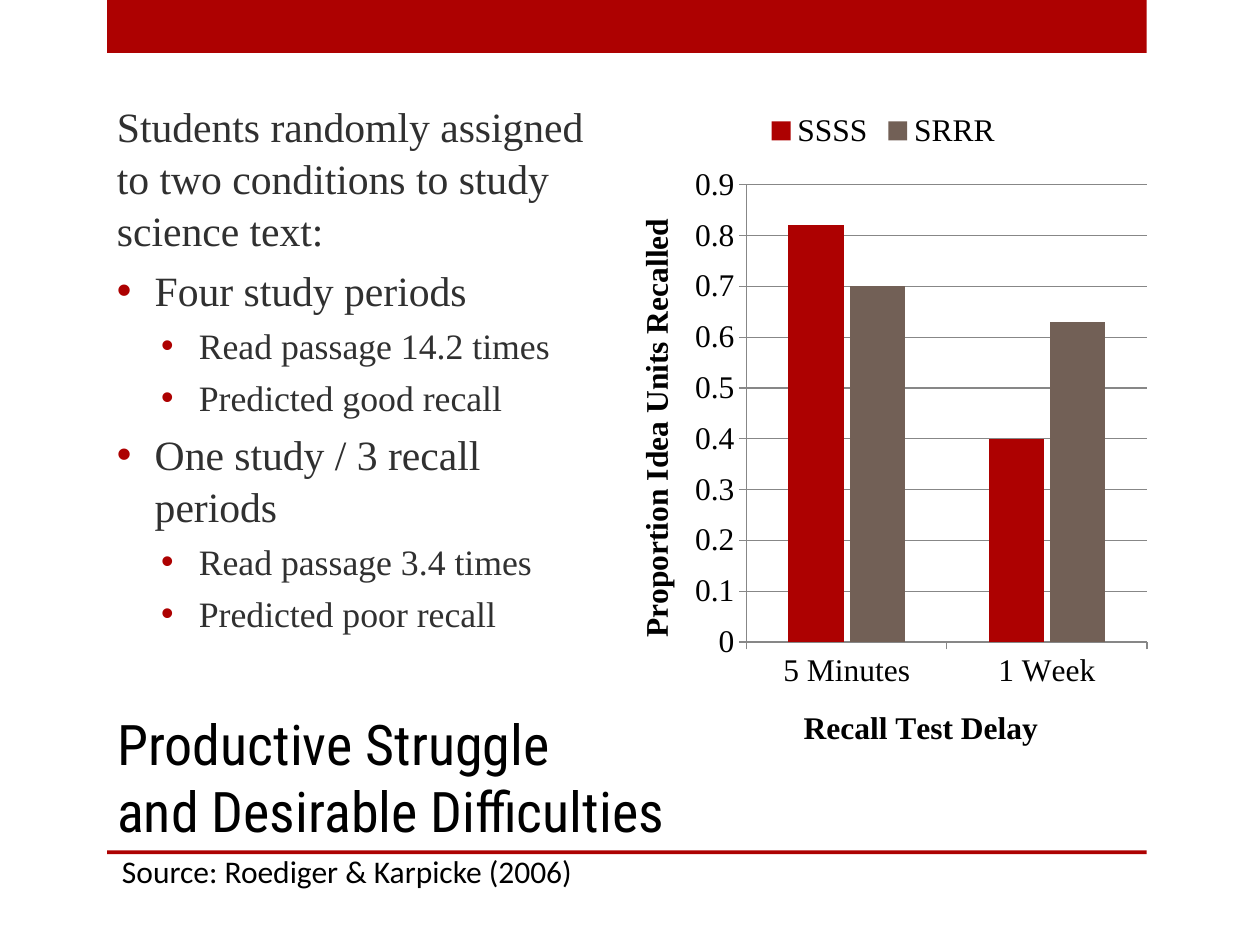
from lxml import etree
from pptx import Presentation
from pptx.chart.data import CategoryChartData
from pptx.dml.color import RGBColor
from pptx.enum.chart import XL_CHART_TYPE as ChartType, XL_LEGEND_POSITION as LegendPosition
from pptx.enum.chart import XL_TICK_MARK as TickMark
from pptx.enum.shapes import MSO_SHAPE as Shape
from pptx.enum.text import MSO_ANCHOR as Anchor, PP_ALIGN as Align
from pptx.oxml.ns import qn
from pptx.util import Inches, Pt

RED, BROWN, BLACK, DARK, GRAY = "AD0101", "726056", "000000", "303030", "878787"
SERIF = "Times New Roman"

# (level, text): level 0 is the plain lead-in, 1 and 2 are bulleted
STUDY_DESIGN = [
    (0, "Students randomly assigned to two conditions to study science text:"),
    (1, "Four study periods"),
    (2, "Read passage 14.2 times"),
    (2, "Predicted good recall"),
    (1, "One study / 3 recall periods"),
    (2, "Read passage 3.4 times"),
    (2, "Predicted poor recall"),
]
LEVEL_SIZE = {0: 23.8, 1: 23.8, 2: 20.4}
LEVEL_INDENT = {1: 0.3, 2: 0.65}
RECALL = [("SSSS", (0.82, 0.4), RED), ("SRRR", (0.7, 0.63), BROWN)]


def color(hex_string):
    return RGBColor.from_string(hex_string)


def inches(box):
    return [Inches(length) for length in box]


def style_font(font, name, size, hex_string, bold=False):
    font.name, font.size, font.bold = name, Pt(size), bold
    font.color.rgb = color(hex_string)


def add_span(para, text, name, size, hex_string):
    span = para.add_run()
    span.text = text
    style_font(span.font, name, size, hex_string)


def add_bar(page, box):
    bar = page.shapes.add_shape(Shape.RECTANGLE, *inches(box))
    bar.shadow.inherit = False
    bar.fill.solid()
    bar.fill.fore_color.rgb = color(RED)
    bar.line.fill.background()


def set_title(page, box, lines):
    title = page.shapes.title
    title.left, title.top, title.width, title.height = inches(box)
    frame = title.text_frame
    frame.vertical_anchor = Anchor.BOTTOM
    para = frame.paragraphs[0]
    para.alignment = Align.LEFT
    for index, line in enumerate(lines):
        if index:
            para.add_line_break()
        add_span(para, line, "Roboto Condensed", 32, BLACK)


def add_bullet(para, indent):
    """Hang a red bullet 0.3 inches left of the indent."""
    props = para._p.get_or_add_pPr()
    props.set("marL", str(Inches(indent)))
    props.set("indent", str(Inches(-0.3)))
    bullet_color = etree.SubElement(props, qn("a:buClr"))
    etree.SubElement(bullet_color, qn("a:srgbClr"), val=RED)
    etree.SubElement(props, qn("a:buFont"), typeface="Arial")
    etree.SubElement(props, qn("a:buChar"), char="•")


def add_study_design(page, box):
    frame = page.shapes.add_textbox(*inches(box)).text_frame
    frame.word_wrap = True
    frame.vertical_anchor = Anchor.MIDDLE
    for index, (level, text) in enumerate(STUDY_DESIGN):
        para = frame.add_paragraph() if index else frame.paragraphs[0]
        size = LEVEL_SIZE[level]
        para.line_spacing = 1.04
        para.space_before = Pt(size * 0.2)
        if level:
            add_bullet(para, LEVEL_INDENT[level])
        add_span(para, text, SERIF, size, DARK)


def style_axis(axis, title):
    axis.major_tick_mark = TickMark.OUTSIDE
    axis.minor_tick_mark = TickMark.NONE
    axis.format.line.color.rgb = color(GRAY)
    para = axis.axis_title.text_frame.paragraphs[0]
    add_span(para, title, SERIF, 18, BLACK)
    para.runs[0].font.bold = True


def add_recall_chart(page, box):
    data = CategoryChartData()
    data.categories = ["5 Minutes", "1 Week"]
    for name, values, _ in RECALL:
        data.add_series(name, values)
    chart = page.shapes.add_chart(ChartType.COLUMN_CLUSTERED, *inches(box), data).chart
    style_font(chart.font, SERIF, 18, BLACK)
    chart.has_title = False
    chart.has_legend = True
    chart.legend.position = LegendPosition.TOP
    chart.legend.include_in_layout = False

    style_axis(chart.category_axis, "Recall Test Delay")
    style_axis(chart.value_axis, "Proportion Idea Units Recalled")
    chart.value_axis.minimum_scale, chart.value_axis.maximum_scale = 0, 0.9
    chart.value_axis.major_unit = 0.1
    chart.value_axis.major_gridlines.format.line.color.rgb = color(GRAY)

    plot = chart.plots[0]
    plot.gap_width, plot.overlap, plot.vary_by_categories = 150, -10, False
    for series, (_, _, fill) in zip(plot.series, RECALL):
        series.format.fill.solid()
        series.format.fill.fore_color.rgb = color(fill)


def add_source_note(page, box, text):
    frame = page.shapes.add_textbox(*inches(box)).text_frame
    frame.word_wrap = False
    add_span(frame.paragraphs[0], text, "Calibri", 18, BLACK)


def main():
    deck = Presentation()
    deck.slide_width, deck.slide_height = Inches(10), Inches(7.5)
    page = deck.slides.add_slide(deck.slide_layouts[5])
    add_bar(page, (0.85, 0, 8.25, 0.42))
    add_bar(page, (0.85, 6.75, 8.25, 0.03))
    set_title(page, (0.83, 5, 7.42, 1.75), ["Productive Struggle", "and Desirable Difficulties"])
    add_study_design(page, (0.83, 0.85, 4, 4.12))
    add_recall_chart(page, (4.83, 0.78, 4.36, 5.38))
    add_source_note(page, (0.87, 6.71, 3.83, 0.4), "Source: Roediger & Karpicke (2006)")
    deck.save("out.pptx")


if __name__ == "__main__":
    main()
